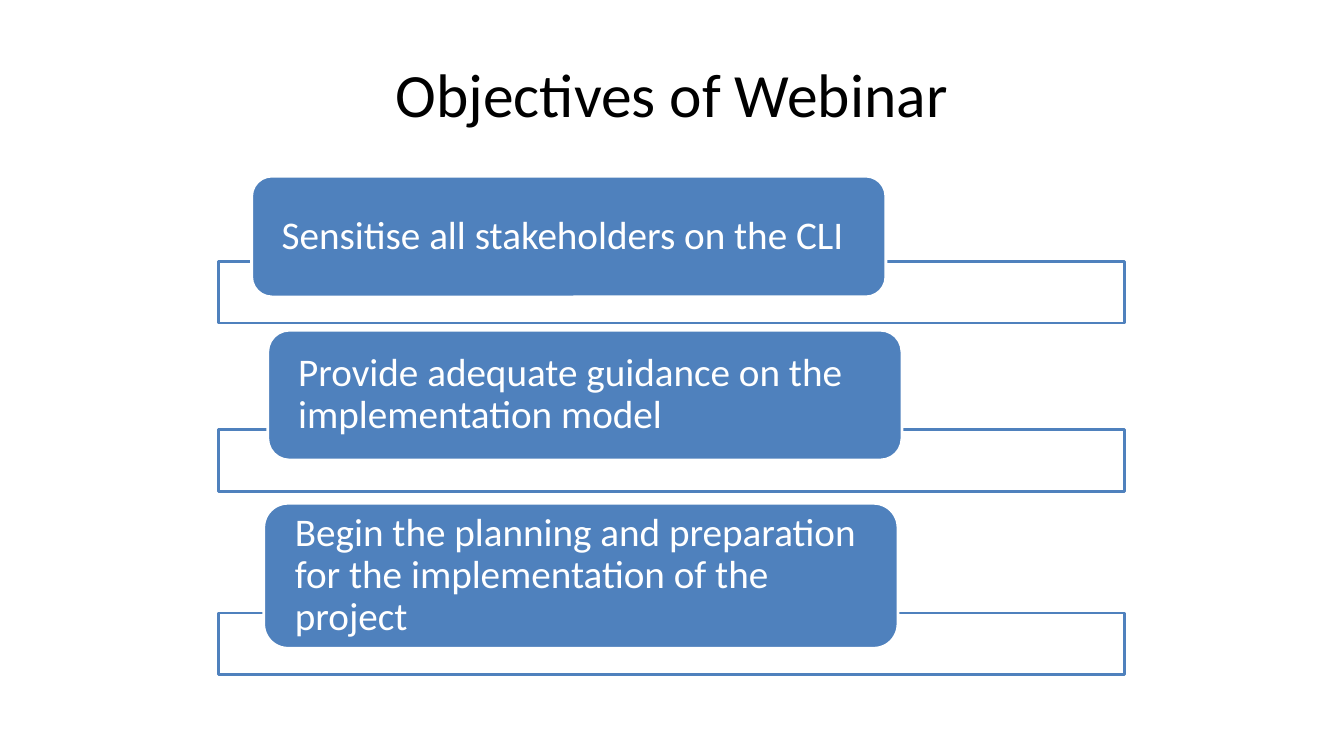
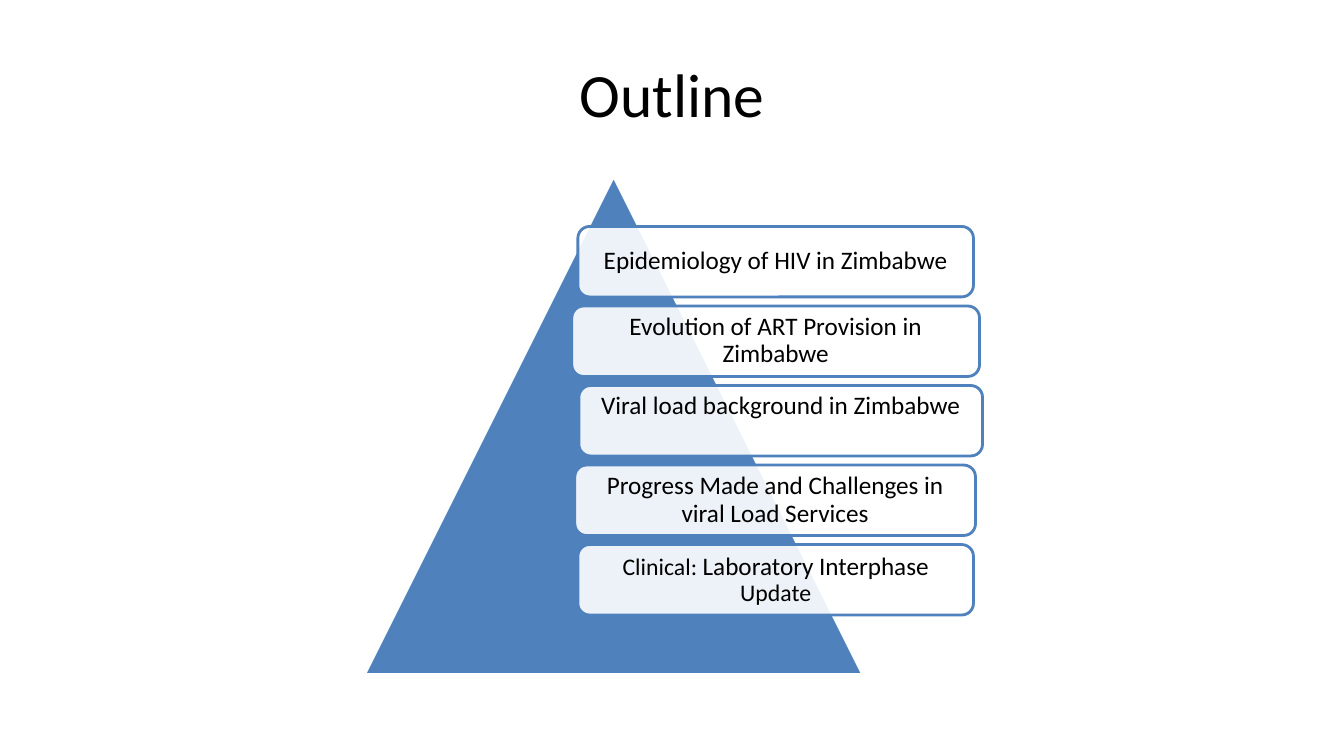
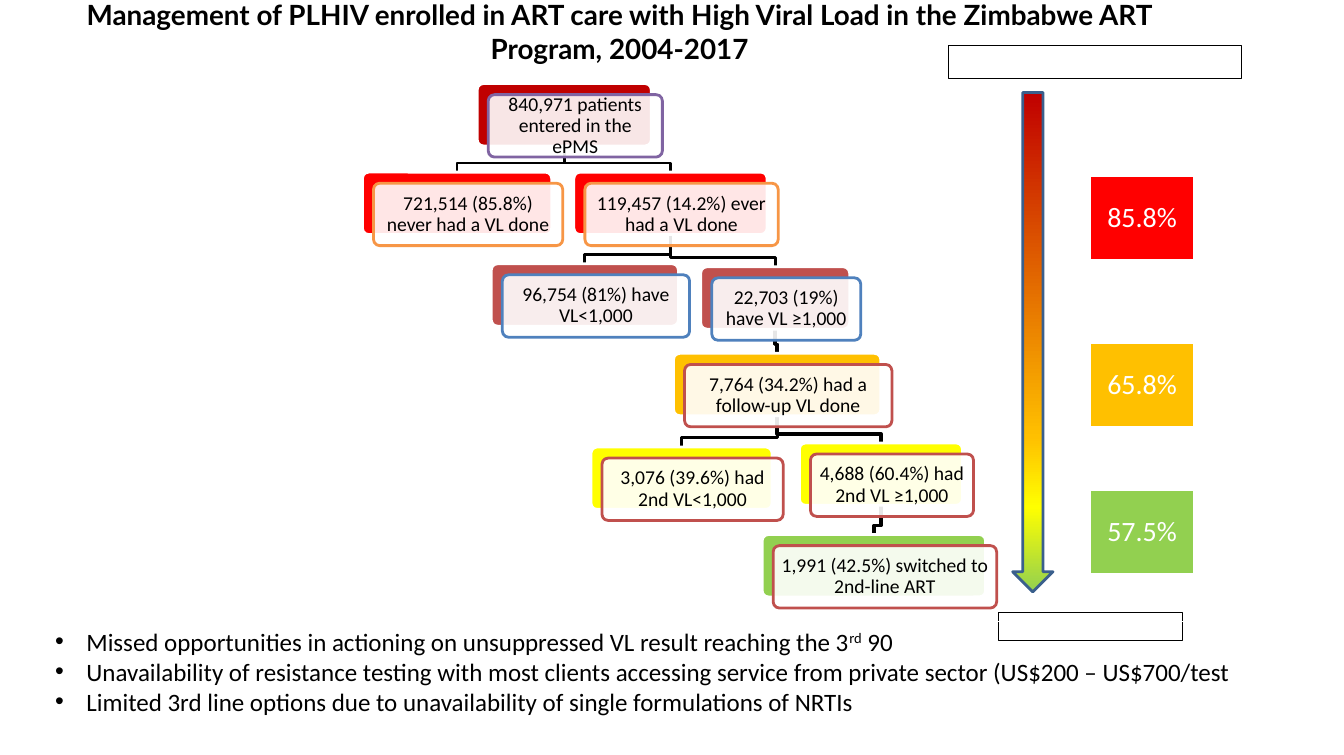
import copy

import pptx
import pptx.dml.color
import pptx.enum.shapes
import pptx.enum.text
import pptx.oxml
import pptx.oxml.ns
import pptx.util

Inches = pptx.util.Inches
Pt = pptx.util.Pt
RGBColor = pptx.dml.color.RGBColor
SHAPE = pptx.enum.shapes.MSO_SHAPE
ALIGN = pptx.enum.text.PP_ALIGN
ANCHOR = pptx.enum.text.MSO_ANCHOR

WHITE = RGBColor(0xFF, 0xFF, 0xFF)
BLACK = RGBColor(0x00, 0x00, 0x00)
BLUE = RGBColor(0x4F, 0x81, 0xBD)
DARK_BLUE = RGBColor(0x3A, 0x5F, 0x8C)
PURPLE = RGBColor(0x80, 0x64, 0xA2)
ORANGE = RGBColor(0xF7, 0x96, 0x46)
BRICK = RGBColor(0xC0, 0x50, 0x4D)
DARK_RED = RGBColor(0xC0, 0x00, 0x00)
RED = RGBColor(0xFF, 0x00, 0x00)
AMBER = RGBColor(0xFF, 0xC0, 0x00)
YELLOW = RGBColor(0xFF, 0xFF, 0x00)
GREEN = RGBColor(0x92, 0xD0, 0x50)

BODY_FONT = "Calibri"
CARD_HEIGHT = 0.62
CARD_SHIFT = 0.11
BEND_GAP = 0.09


def apply(target, values):
    for name, value in values.items():
        setattr(target, name, value)


class Deck:
    """Holds the shared style and the slide being built."""

    def __init__(self):
        self.prs = pptx.Presentation()
        apply(self.prs, {"slide_width": Inches(13.35), "slide_height": Inches(7.5)})
        self.slide = None

    def new_slide(self):
        self.slide = self.prs.slides.add_slide(self.prs.slide_layouts[6])

    def fill_text(self, frame, paragraphs, size, color=BLACK, font=BODY_FONT, bold=False,
                  align=ALIGN.CENTER, anchor=ANCHOR.MIDDLE, insets=(0.1, 0.05, 0.1, 0.05),
                  spacing=None):
        """Each paragraph is a string or a list of (text, size) runs."""
        sides = ("margin_left", "margin_top", "margin_right", "margin_bottom")
        apply(frame, {"word_wrap": True, "vertical_anchor": anchor,
                      **{side: Inches(inset) for side, inset in zip(sides, insets)}})
        for index, content in enumerate(paragraphs):
            paragraph = frame.add_paragraph() if index else frame.paragraphs[0]
            apply(paragraph, {"alignment": align, "line_spacing": spacing})
            runs = [(content, size)] if isinstance(content, str) else content
            for text, run_size in runs:
                run = paragraph.add_run()
                run.text = text
                apply(run.font, {"name": font, "size": Pt(run_size), "bold": bold})
                run.font.color.rgb = color

    def title(self, text, box=(0.67, 0.3, 12.01, 1.25), size=44, **style):
        frame = self.slide.shapes.add_textbox(*map(Inches, box)).text_frame
        self.fill_text(frame, [text], size, **style)

    def shape(self, kind, box, fill=None, line=WHITE, width=2, alpha=None, corner=None):
        shape = self.slide.shapes.add_shape(kind, *map(Inches, box))
        shape.shadow.inherit = False
        if fill is None:
            shape.fill.background()
        else:
            shape.fill.solid()
            shape.fill.fore_color.rgb = fill
        if alpha is not None:
            color = shape.fill._xPr.find(".//" + pptx.oxml.ns.qn("a:srgbClr"))
            color.append(pptx.oxml.parse_xml(
                f'<a:alpha {pptx.oxml.ns.nsdecls("a")} val="{alpha * 1000}"/>'))
        if corner is not None:
            shape.adjustments[0] = corner
        shape.line.color.rgb = line
        shape.line.width = Pt(width)
        return shape

    def glass(self, kind, box, line, corner=None):
        return self.shape(kind, box, WHITE, line, alpha=90, corner=corner)

    def elbow(self, start, end, width):
        (x1, y1), (x2, y2) = start, end
        bend = y2 - BEND_GAP
        points = [(Inches(x), Inches(y)) for x, y in
                  ((x1, y1), (x1, bend), (x2, bend), (x2, y2))]
        builder = self.slide.shapes.build_freeform(*points[0], scale=1.0)
        builder.add_line_segments(points[1:], close=False)
        link = builder.convert_to_shape()
        link.shadow.inherit = False
        link.fill.background()
        link.line.color.rgb = BLACK
        link.line.width = Pt(width)

    def gradient(self, shape, stops):
        shape.fill.gradient()
        shape.fill.gradient_angle = 270
        stop_list = shape.fill._xPr.find(".//" + pptx.oxml.ns.qn("a:gsLst"))
        while len(stop_list) < len(stops):
            stop_list.append(copy.deepcopy(stop_list[0]))
        for stop, (position, color) in zip(shape.fill.gradient_stops, stops):
            stop.position = position
            stop.color.rgb = color

    def rate_column(self, box, rows):
        """Rows are (height, text, fill); a fill of None leaves a gap."""
        table = self.slide.shapes.add_table(len(rows), 1, *map(Inches, box)).table
        apply(table, {"first_row": False, "horz_banding": False})
        for index, (height, text, fill) in enumerate(rows):
            table.rows[index].height = Inches(height)
            cell = table.cell(index, 0)
            if fill is None:
                cell.fill.background()
                continue
            cell.fill.solid()
            cell.fill.fore_color.rgb = fill
            self.fill_text(cell.text_frame, [text], 20, WHITE)
            cell.vertical_anchor = ANCHOR.MIDDLE

    def bullets(self, frame, indent):
        for paragraph in frame.paragraphs:
            properties = paragraph._p.get_or_add_pPr()
            properties.set("marL", str(Inches(indent)))
            properties.set("indent", str(-Inches(indent)))
            for tag in ('buFont {} typeface="Arial"', 'buChar {} char="•"'):
                properties.append(pptx.oxml.parse_xml(
                    "<a:" + tag.format(pptx.oxml.ns.nsdecls("a")) + "/>"))


def objectives(deck):
    deck.new_slide()
    deck.title("Objectives of Webinar")
    goals = [  # text, bar top, label left, label top, label height
        ("Sensitise all stakeholders on the CLI", 2.6, 2.5, 1.75, 1.2),
        ("Provide adequate guidance on the implementation model", 4.27, 2.66, 3.28, 1.29),
        ("Begin the planning and preparation for the implementation of the project",
         6.09, 2.62, 5, 1.44),
    ]
    for text, bar_top, left, top, height in goals:
        deck.glass(SHAPE.RECTANGLE, (2.17, bar_top, 9, 0.61), BLUE)
        label = deck.shape(SHAPE.ROUNDED_RECTANGLE, (left, top, 6.3, height), BLUE)
        deck.fill_text(label.text_frame, [text], 28, WHITE, align=ALIGN.LEFT,
                       insets=(0.24, 0, 0.24, 0), spacing=0.9)


def outline(deck):
    deck.new_slide()
    deck.title("Outline")
    deck.shape(SHAPE.ISOSCELES_TRIANGLE, (3.62, 1.75, 4.95, 4.95), BLUE)
    update = [("Clinical: ", 17), ("Laboratory", 18), (" ", 17), ("Interphase", 18),
              (" Update", 17)]
    topics = [  # text, left, width, anchor, top inset
        ("Epidemiology of HIV in Zimbabwe", 5.74, 3.93, ANCHOR.MIDDLE, 0.07),
        ("Evolution of ART Provision in Zimbabwe", 5.68, 4.05, ANCHOR.MIDDLE, 0.07),
        ("Viral load background in Zimbabwe", 5.75, 4.01, ANCHOR.TOP, 0.04),
        ("Progress Made and Challenges in viral Load Services", 5.71, 3.98,
         ANCHOR.MIDDLE, 0.07),
        (update, 5.74, 3.93, ANCHOR.MIDDLE, 0.07),
    ]
    for index, (text, left, width, anchor, inset) in enumerate(topics):
        topic = deck.glass(SHAPE.ROUNDED_RECTANGLE,
                           (left, 2.25 + 0.79 * index, width, 0.7), BLUE)
        deck.fill_text(topic.text_frame, [text], 18, anchor=anchor,
                       insets=(0.07, inset, 0.07, 0.07), spacing=0.9)


def viral_load_cascade(deck):
    deck.new_slide()
    deck.title("Management of PLHIV enrolled in ART care with High Viral Load in the "
               "Zimbabwe ART Program, 2004-2017",
               box=(0.45, 0.14, 11.41, 0.34), size=19.9, font="Lato", bold=True)

    # Patient cascade: text, left, top, width, back fill, front line, parent, link width
    groups = [
        ("840,971 patients entered in the ePMS", 4.74, 0.83, 1.73, DARK_RED, PURPLE, None, 0),
        ("721,514 (85.8%) never had a VL done", 3.6, 1.71, 1.88, RED, ORANGE, 0, 2),
        ("119,457 (14.2%) ever had a VL done", 5.7, 1.71, 1.92, RED, ORANGE, 0, 2),
        ("96,754 (81%) have VL<1,000", 4.88, 2.62, 1.86, BRICK, BLUE, 2, 2),
        ("22,703 (19%) have VL ≥1,000", 6.96, 2.65, 1.48, BRICK, BLUE, 2, 2),
        ("7,764 (34.2%) had a follow-up VL done", 6.69, 3.51, 2.06, AMBER, BRICK, 4, 2.5),
        ("3,076 (39.6%) had 2nd VL<1,000", 5.87, 4.44, 1.8, YELLOW, BRICK, 5, 2),
        ("4,688 (60.4%) had 2nd VL ≥1,000", 7.94, 4.4, 1.62, YELLOW, BRICK, 5, 2.5),
        ("1,991 (42.5%) switched to 2nd-line ART", 7.57, 5.31, 2.22, GREEN, BRICK, 7, 2.5),
    ]
    for _, left, top, width, _, _, parent, link_width in groups:
        if parent is not None:
            _, parent_left, parent_top, parent_width, *_ = groups[parent]
            deck.elbow((parent_left + parent_width / 2, parent_top + CARD_HEIGHT),
                       (left + width / 2, top), link_width)
    for text, left, top, width, fill, line, *_ in groups:
        deck.shape(SHAPE.ROUNDED_RECTANGLE, (left, top, width, CARD_HEIGHT), fill, corner=0.1)
        card = deck.glass(SHAPE.ROUNDED_RECTANGLE,
                          (left + CARD_SHIFT, top + CARD_SHIFT, width, CARD_HEIGHT),
                          line, corner=0.1)
        deck.fill_text(card.text_frame, [text], 14, insets=(0.06,) * 4, spacing=0.9)

    # Rates beside the arrow
    deck.rate_column((10.83, 0.92, 1.03, 4.78), [
        (0.83, "", None), (0.83, "85.8%", RED), (0.83, "", None),
        (0.83, "65.8%", AMBER), (0.63, "", None), (0.83, "57.5%", GREEN)])
    arrow = deck.shape(SHAPE.DOWN_ARROW, (10.06, 0.92, 0.4, 4.96), line=DARK_BLUE)
    deck.gradient(arrow, [(0, DARK_RED), (0.69, AMBER), (0.83, YELLOW), (1, GREEN)])

    # Empty frames at both ends of the arrow
    for frame_box in ((9.42, 0.45, 2.91, 0.33), (9.92, 6.08, 1.83, 0.28)):
        deck.shape(SHAPE.RECTANGLE, frame_box, line=BLACK, width=0.75)

    # Remarks
    remarks = deck.shape(SHAPE.RECTANGLE, (0.45, 6.17, 12.62, 1.01), width=0.75).text_frame
    deck.fill_text(remarks, [
        [("Missed opportunities in actioning on unsuppressed VL result reaching the 3", 17.9),
         ("rd", 17.9), (" 90", 17.9)],
        "Unavailability of resistance testing with most clients accessing service from "
        "private sector (US$200 – US$700/test",
        "Limited 3rd line options due to unavailability of single formulations of NRTIs",
    ], 17.9, align=ALIGN.LEFT, anchor=ANCHOR.TOP)
    deck.bullets(remarks, 0.31)
    ordinal = remarks.paragraphs[0].runs[1]
    ordinal._r.get_or_add_rPr().set("baseline", "30000")


def main():
    deck = Deck()
    objectives(deck)
    outline(deck)
    viral_load_cascade(deck)
    deck.prs.save("out.pptx")


if __name__ == "__main__":
    main()
